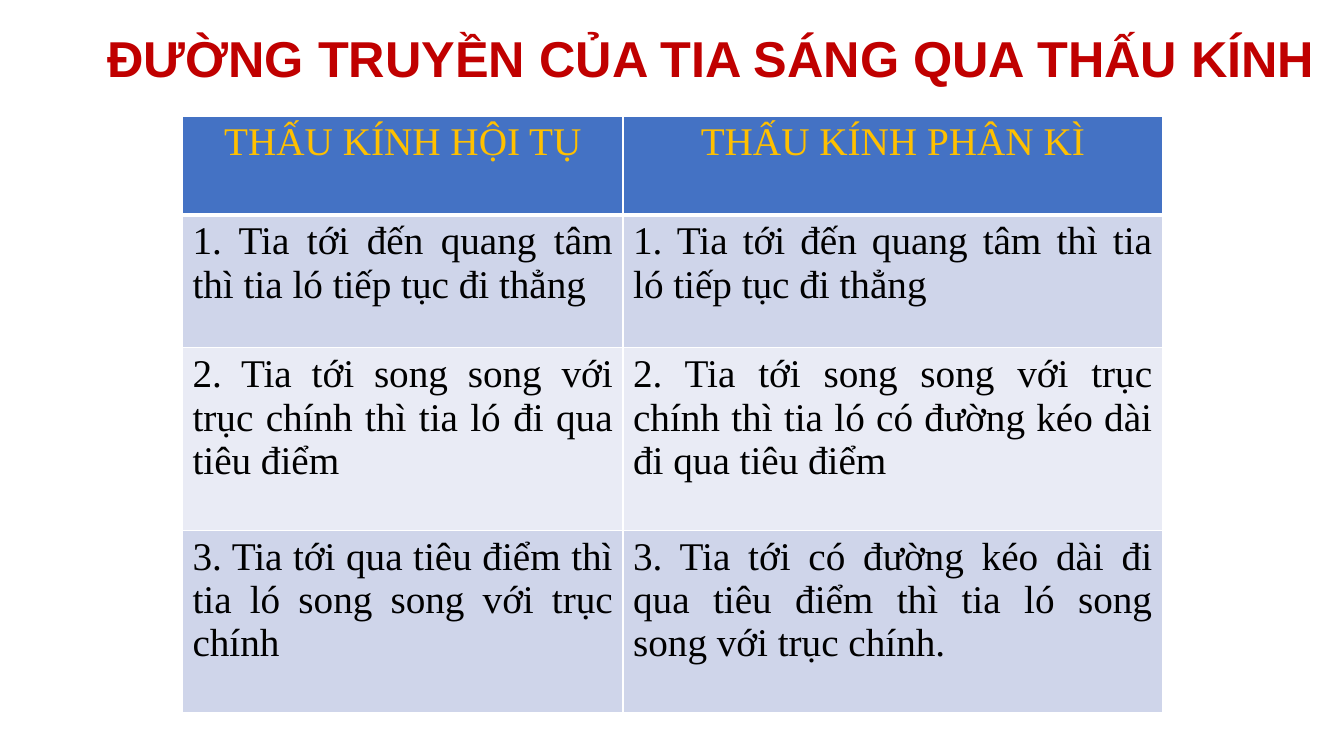
import dataclasses

import lxml.etree
import pptx
import pptx.dml.color
import pptx.enum.text
import pptx.oxml.ns
import pptx.util

SCALE = 9144  # EMU per px, 100 px to the inch
ALIGN = pptx.enum.text.PP_ALIGN
ANCHOR = pptx.enum.text.MSO_ANCHOR
FIT = pptx.enum.text.MSO_AUTO_SIZE


@dataclasses.dataclass(frozen=True)
class Row:
    height: int
    fill: str
    texts: tuple[str, str]
    color: str = "000000"
    align: ALIGN = ALIGN.JUSTIFY
    top: int = 1
    base: int = 1


COLS = (437, 535)
ROWS = (
    Row(98, "4472C4", ("THẤU KÍNH HỘI TỤ", "THẤU KÍNH PHÂN KÌ"),
        color="FFC000", align=ALIGN.CENTER, base=3),
    Row(132, "CFD5EA", (
        "1. Tia tới đến quang tâm thì tia ló tiếp tục đi thẳng",
        "1. Tia tới đến quang tâm thì tia ló tiếp tục đi thẳng")),
    Row(181, "E9EBF5", (
        "2. Tia tới song song với trục chính thì tia ló đi qua tiêu điểm",
        "2. Tia tới song song với trục chính thì tia ló có đường kéo dài "
        "đi qua tiêu điểm")),
    Row(181, "CFD5EA", (
        "3. Tia tới qua tiêu điểm thì tia ló song song với trục chính",
        "3. Tia tới có đường kéo dài đi qua tiêu điểm thì tia ló song song "
        "với trục chính.")),
)


def px(size: int) -> pptx.util.Emu:
    return pptx.util.Emu(size * SCALE)


def rgb(code: str) -> pptx.dml.color.RGBColor:
    return pptx.dml.color.RGBColor.from_string(code)


def write(frame, text: str, *, font: str, size: int, color: str,
          align: ALIGN, bold: bool = False) -> None:
    para = frame.paragraphs[0]
    para.alignment = align
    run = para.add_run()
    run.text = text
    run.font.name = font
    run.font.size = pptx.util.Pt(size)
    run.font.bold = bold
    run.font.color.rgb = rgb(color)


def edge(cell, top: int, base: int) -> None:
    """Draw white borders; top and base are widths in points."""
    props = cell._tc.get_or_add_tcPr()
    qn = pptx.oxml.ns.qn
    sides = {"lnL": 1, "lnR": 1, "lnT": top, "lnB": base}
    for spot, (tag, width) in enumerate(sides.items()):
        line = lxml.etree.Element(qn(f"a:{tag}"), w=str(pptx.util.Pt(width)))
        fill = lxml.etree.SubElement(line, qn("a:solidFill"))
        lxml.etree.SubElement(fill, qn("a:srgbClr"), val="FFFFFF")
        props.insert(spot, line)


def add_title(slide) -> None:
    title = slide.shapes.title
    title.left, title.top = px(78), px(22)
    title.width, title.height = px(1255), px(71)
    frame = title.text_frame
    frame.word_wrap = True
    frame.auto_size = FIT.SHAPE_TO_FIT_TEXT
    frame.vertical_anchor = ANCHOR.TOP
    write(frame, "ĐƯỜNG TRUYỀN CỦA TIA SÁNG QUA THẤU KÍNH", font="Arial",
          size=36, color="C00000", align=ALIGN.CENTER, bold=True)


def add_grid(slide) -> None:
    high = sum(row.height for row in ROWS)
    grid = slide.shapes.add_table(len(ROWS), len(COLS), px(181), px(115),
                                  px(sum(COLS)), px(high)).table
    for col, width in zip(grid.columns, COLS):
        col.width = px(width)
    for r, row in enumerate(ROWS):
        grid.rows[r].height = px(row.height)
        for c, text in enumerate(row.texts):
            cell = grid.cell(r, c)
            cell.fill.solid()
            cell.fill.fore_color.rgb = rgb(row.fill)
            edge(cell, row.top, row.base)
            write(cell.text_frame, text, font="Times New Roman", size=28,
                  color=row.color, align=row.align)


def main() -> None:
    deck = pptx.Presentation()
    deck.slide_width, deck.slide_height = px(1333), px(750)
    slide = deck.slides.add_slide(deck.slide_layouts.get_by_name("Title Only"))
    add_title(slide)
    add_grid(slide)
    deck.save("out.pptx")


if __name__ == "__main__":
    main()
